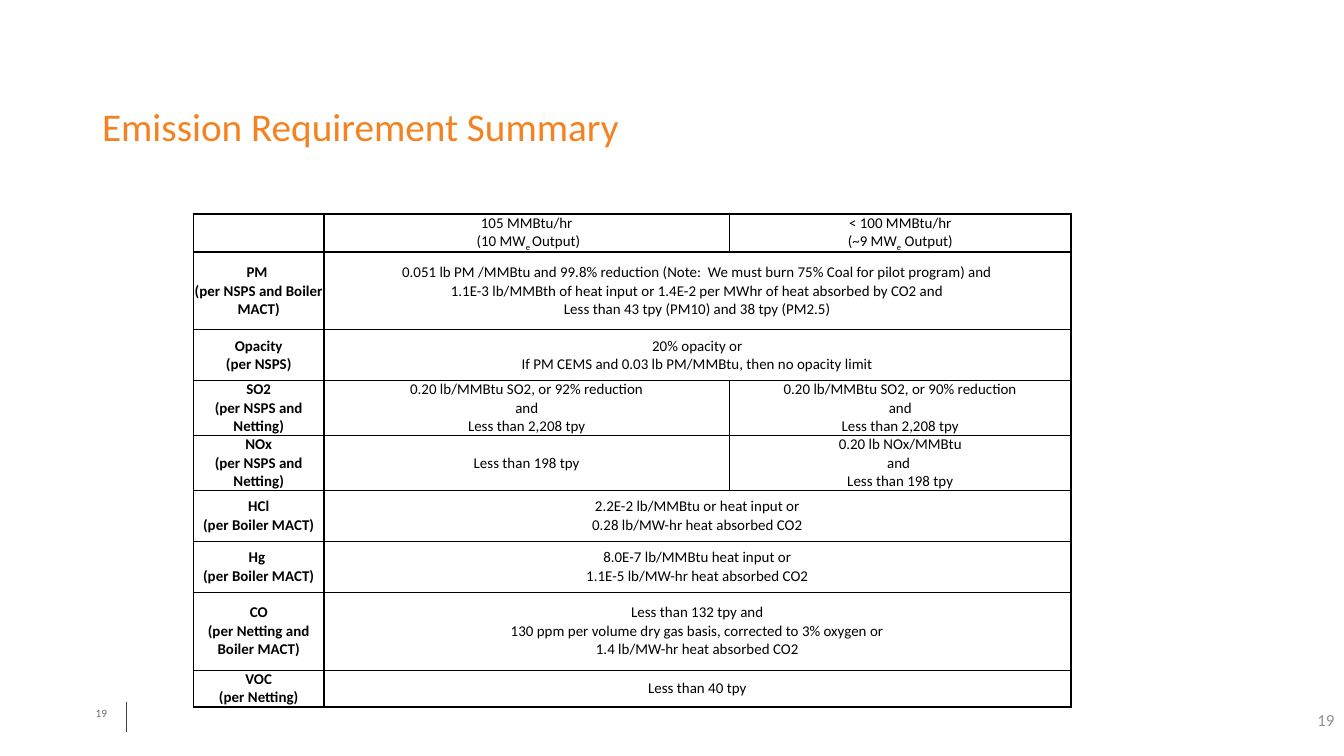
import copy

import pptx
import pptx.dml.color
import pptx.enum.shapes
import pptx.enum.text
import pptx.oxml.ns
import pptx.util
from lxml import etree

Cm, Pt = pptx.util.Cm, pptx.util.Pt
ALIGN, ANCHOR = pptx.enum.text.PP_ALIGN, pptx.enum.text.MSO_ANCHOR
qn = pptx.oxml.ns.qn

FONT = "Calibri"
COLORS = {"title": "F58220", "text": "000000", "border": "000000",
          "footer": "6B7069", "rule": "424142", "number": "919191"}

# text, left, top, width, height, size, colour, alignment, anchor, line spacing
TEXTS = [
    ("19", 1.63, 13.26, 2.21, 0.46, 6, "footer", ALIGN.LEFT, ANCHOR.TOP, 1),
    ("Emission Requirement Summary", 1.75, 1.42, 21.89, 2.03, 21, "title",
     ALIGN.LEFT, ANCHOR.MIDDLE, 0.9),
    ("19", 19.69, 13.23, 5.71, 0.76, 9, "number", ALIGN.RIGHT, ANCHOR.MIDDLE, 1),
]
RULE = (2.39, 13.26, 2.39, 13.84)

# Text between underscores is subscript; a row with two entries spans the last two columns.
TABLE_AT = (3.66, 4.04)
COL_WIDTHS = [2.46, 7.67, 6.45]
ROWS = [
    (0.72, ["", "105 MMBtu/hr\n (10 MW_e _Output)", "< 100 MMBtu/hr\n(~9 MW_e_ Output)"]),
    (1.47, ["PM \n(per NSPS and Boiler MACT)",
            "0.051 lb PM /MMBtu and 99.8% reduction (Note:  We must burn 75% Coal "
            "for pilot program) and\n"
            "1.1E-3 lb/MMBth of heat input or 1.4E-2 per MWhr of heat absorbed by CO2 and\n"
            "Less than 43 tpy (PM10) and 38 tpy (PM2.5)"]),
    (0.96, ["Opacity\n(per NSPS)",
            "20% opacity or\nIf PM CEMS and 0.03 lb PM/MMBtu, then no opacity limit"]),
    (1.04, ["SO2\n(per NSPS and Netting)",
            "0.20 lb/MMBtu SO2, or 92% reduction\nand\nLess than 2,208 tpy",
            "0.20 lb/MMBtu SO2, or 90% reduction\nand\nLess than 2,208 tpy"]),
    (1.04, ["NOx\n(per NSPS and Netting)", "Less than 198 tpy",
            "0.20 lb NOx/MMBtu\nand \nLess than 198 tpy"]),
    (0.96, ["HCl\n(per Boiler MACT)",
            "2.2E-2 lb/MMBtu or heat input or\n0.28 lb/MW-hr heat absorbed CO2"]),
    (0.96, ["Hg \n(per Boiler MACT)",
            "8.0E-7 lb/MMBtu heat input or\n1.1E-5 lb/MW-hr heat absorbed CO2"]),
    (1.47, ["CO\n(per Netting and Boiler MACT)",
            "Less than 132 tpy and\n"
            "130 ppm per volume dry gas basis, corrected to 3% oxygen or\n"
            "1.4 lb/MW-hr heat absorbed CO2"]),
    (0.70, ["VOC\n(per Netting)", "Less than 40 tpy"]),
]


def rgb(name):
    return pptx.dml.color.RGBColor.from_string(COLORS[name])


def set_margins(box, side, end):
    box.margin_left = box.margin_right = Cm(side)
    box.margin_top = box.margin_bottom = Cm(end)


def add_run(p, text, size, color, bold=False):
    r = p.add_run()
    r.text = text
    r.font.name, r.font.size, r.font.bold = FONT, Pt(size), bold
    r.font.color.rgb = rgb(color)
    return r


def add_text(slide, text, left, top, width, height, size, color, align, anchor, spacing):
    tf = slide.shapes.add_textbox(Cm(left), Cm(top), Cm(width), Cm(height)).text_frame
    tf.word_wrap = True
    tf.vertical_anchor = anchor
    set_margins(tf, 0.18, 0.1)
    p = tf.paragraphs[0]
    p.alignment, p.line_spacing = align, spacing
    add_run(p, text, size, color)


def add_rule(slide, ends):
    s = slide.shapes.add_connector(pptx.enum.shapes.MSO_CONNECTOR.STRAIGHT,
                                   *(Cm(v) for v in ends))
    s.line.color.rgb = rgb("rule")
    s.line.width = Pt(0.75)
    etree.SubElement(s._element.spPr, qn("a:effectLst"))


def set_borders(cell, widths):
    """Draw the left, right, top and bottom borders, with widths in points."""
    tc_pr = cell._tc.get_or_add_tcPr()
    for i, (side, width) in enumerate(zip("LRTB", widths)):
        ln = etree.Element(qn(f"a:ln{side}"), w=str(Pt(width)))
        fill = etree.SubElement(ln, qn("a:solidFill"))
        etree.SubElement(fill, qn("a:srgbClr"), val=COLORS["border"])
        tc_pr.insert(i, ln)


def fill_cell(cell, text, bold):
    p = cell.text_frame.paragraphs[0]
    p.alignment = ALIGN.CENTER
    if not text:
        etree.SubElement(p._p, qn("a:endParaRPr"), sz="800")
    for i, line in enumerate(text.split("\n") if text else []):
        if i:
            p.add_line_break()
            p._p[-1].append(copy.deepcopy(r._r.rPr))
        for j, part in enumerate(line.split("_")):
            r = add_run(p, part, 8, "text", bold)
            if j % 2:
                r._r.rPr.set("baseline", "-25000")


def add_table(slide):
    last_row, last_col = len(ROWS) - 1, len(COL_WIDTHS) - 1
    table = slide.shapes.add_table(
        len(ROWS), len(COL_WIDTHS), *(Cm(v) for v in TABLE_AT),
        Cm(sum(COL_WIDTHS)), Cm(sum(height for height, _ in ROWS))).table
    table.first_row = table.horz_banding = False
    for col, width in zip(table.columns, COL_WIDTHS):
        col.width = Cm(width)
    for i, (height, texts) in enumerate(ROWS):
        table.rows[i].height = Cm(height)
        spans = len(texts) == 2
        if spans:
            table.cell(i, 1).merge(table.cell(i, 2))
        for j in range(len(COL_WIDTHS)):
            cell = table.cell(i, j)
            cell.vertical_anchor = ANCHOR.MIDDLE
            set_margins(cell, *((0.2, 0.1) if spans and j else (0, 0)))
            cell.fill.background()
            header = i == 0
            heavy = (header or j < 2, header or j in (0, last_col) or spans,
                     i < 2, header or i == last_row)
            set_borders(cell, [1 if h else 0.5 for h in heavy])
            fill_cell(cell, texts[j] if j < len(texts) else "", j == 0)


def main():
    prs = pptx.Presentation()
    prs.slide_width, prs.slide_height = Cm(25.4), Cm(14.29)
    slide = prs.slides.add_slide(prs.slide_layouts[6])
    for item in TEXTS:
        add_text(slide, *item)
    add_rule(slide, RULE)
    add_table(slide)
    prs.save("out.pptx")


if __name__ == "__main__":
    main()
